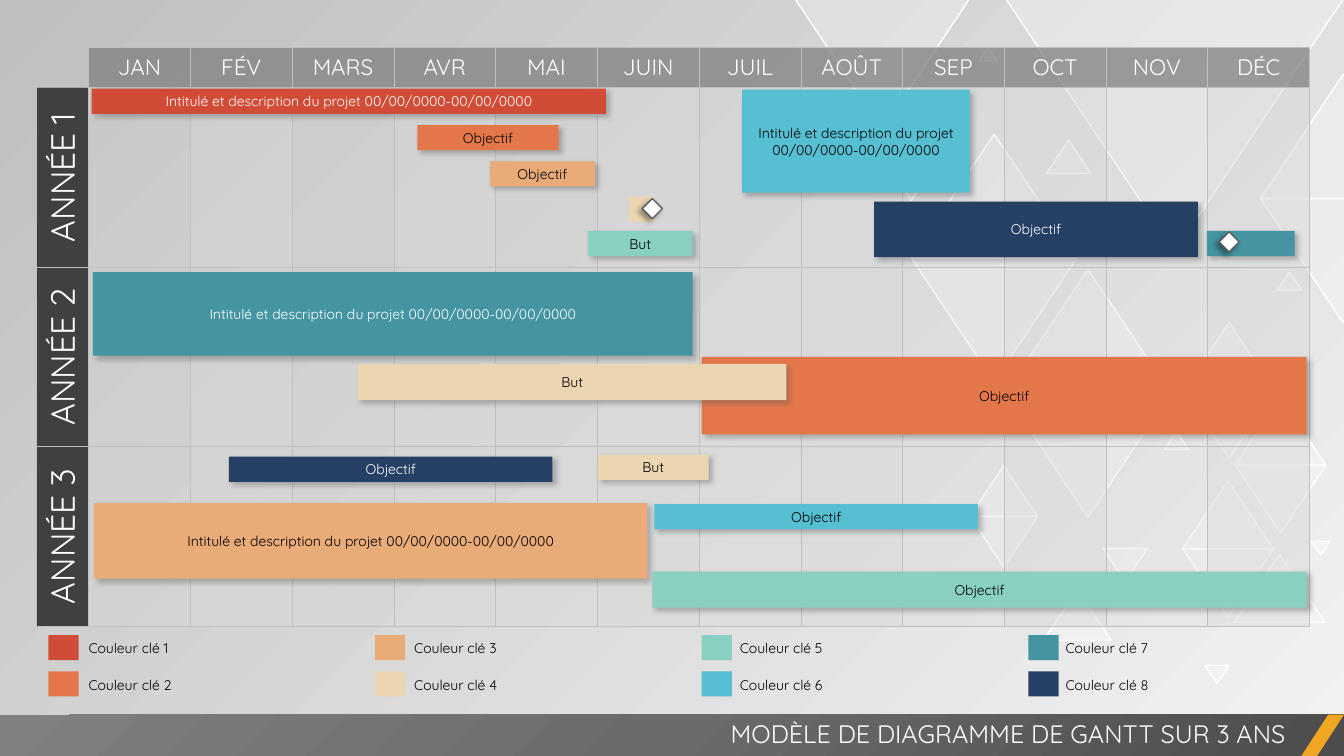
from lxml import etree
from pptx import Presentation
from pptx.dml.color import RGBColor as RGB
from pptx.enum.shapes import MSO_SHAPE as Preset
from pptx.enum.text import MSO_ANCHOR as Anchor, MSO_AUTO_SIZE as AutoSize, PP_ALIGN as Align
from pptx.oxml.ns import qn
from pptx.util import Inches, Pt

COLORS = {
    "white": "FFFFFF", "black": "000000", "dark": "404040", "outline": "595959",
    "header": "808080", "cell": "D9D9D9", "border": "BFBFBF", "header_border": "A6A6A6",
    "light": "F2F2F2", "footer": "4C4C4C", "footer_mid": "6B6B6B", "accent": "F0A622",
    "red": "D14C36", "orange": "E4774A", "peach": "E9AB77", "sand": "ECD6B2",
    "mint": "89D0C2", "sky": "56BFD2", "teal": "4494A2", "navy": "264065",
}
KEY_COLORS = ["red", "orange", "peach", "sand", "mint", "sky", "teal", "navy"]
MONTHS = ["JAN", "FÉV", "MARS", "AVR", "MAI", "JUIN",
          "JUIL", "AOÛT", "SEP", "OCT", "NOV", "DÉC"]
PROJECT = "Intitulé et description du projet 00/00/0000-00/00/0000"
GOAL = "Objectif"
TARGET = "But"
BARS = [
    (0.91, 0.88, 5.1, 0.25, "red", PROJECT),
    (4.14, 1.24, 1.4, 0.25, "orange", GOAL),
    (4.86, 1.6, 1.04, 0.25, "peach", GOAL),
    (5.83, 2.29, 1.04, 0.25, "mint", TARGET),
    (7.36, 0.89, 2.26, 1.02, "sky", PROJECT),
    (0.92, 2.7, 5.95, 0.83, "teal", PROJECT),
    (8.67, 2, 3.21, 0.55, "navy", GOAL),
    (6.96, 3.54, 6, 0.77, "orange", GOAL),
    (0.93, 4.99, 5.49, 0.75, "peach", PROJECT),
    (5.93, 4.51, 1.1, 0.25, "sand", TARGET),
    (6.47, 5.67, 6.49, 0.36, "mint", GOAL),
    (6.49, 5, 3.21, 0.25, "sky", GOAL),
    (11.97, 2.29, 0.87, 0.25, "teal", ""),
    (3.55, 3.61, 4.25, 0.36, "sand", TARGET),
    (2.27, 4.53, 3.21, 0.25, "navy", GOAL),
]
LIGHT_TEXT_BARS = {"red", "teal", "navy"}
MILESTONES = [(6.37, 1.97), (12.09, 2.3)]
RHOMBUSES = [(9.04, 1.33, 1.64), (9.97, 2.67, 1.64), (11.73, 4.77, 0.9), (11.74, 3.2, 0.9),
             (12.25, 3.94, 0.9), (9.62, 4.62, 0.67), (12.5, 0.74, 1.64)]
UPWARD = [(12.24, 5.5, 0.9), (10.35, 5.85, 0.67), (11.55, 4.28, 0.24),
          (12.67, 2.7, 0.24), (9.71, 0.47, 0.18), (10.38, 1.39, 0.44)]
DOWNWARD = [(9.97, -0.02, 3.36), (10.94, 5.44, 0.44), (11.95, 6.6, 0.24),
            (8.92, 1.81, 0.24), (13.01, 5.37, 0.18), (7.88, -0.02, 1.74)]


def rgb(name):
    return RGB.from_string(COLORS[name])


def child(parent, tag, **attributes):
    return etree.SubElement(parent, qn(tag), {key: str(value) for key, value in attributes.items()})


def set_alpha(element, percent):
    color = next(element.iter(qn("a:srgbClr")))
    child(color, "a:alpha", val=percent * 1000)


class GanttSlide:
    font = "Quicksand"

    def __init__(self, presentation):
        self.slide = presentation.slides.add_slide(presentation.slide_layouts[6])

    def background(self):
        fill = self.slide.background.fill
        fill.gradient()
        fill.gradient_angle = 135
        for stop, position, name in zip(fill.gradient_stops, (0, 1), ("light", "border")):
            stop.position = position
            stop.color.rgb = rgb(name)
        set_alpha(self.slide.background._cSld, 40)

    def text(self, frame, content, size, color, align=Align.CENTER):
        paragraph = frame.paragraphs[0]
        paragraph.alignment = align
        run = paragraph.add_run()
        run.text = content
        formats = {"name": self.font, "size": Pt(size), "bold": False}
        for attribute, value in formats.items():
            setattr(run.font, attribute, value)
        run.font.color.rgb = rgb(color)

    def shape(self, preset, box, fill, line=None, shapes=None):
        shapes = shapes or self.slide.shapes
        shape = shapes.add_shape(preset, *map(Inches, box))
        shape.fill.solid()
        shape.fill.fore_color.rgb = rgb(fill)
        if line:
            shape.line.color.rgb = rgb(line)
            shape.line.width = Pt(1)
        else:
            shape.line.fill.background()
        shape.shadow.inherit = False
        return shape

    def shadow(self, shape, color, angle):
        effects = shape._element.spPr.find(qn("a:effectLst"))
        outer = child(effects, "a:outerShdw", blurRad=Pt(4), dist=Pt(3),
                      dir=angle * 60000, algn="tl", rotWithShape=0)
        child(outer, "a:srgbClr", val=COLORS[color])
        set_alpha(outer, 40)

    def triangles(self):
        upward = UPWARD + RHOMBUSES
        downward = DOWNWARD + [(x, y + 0.75 * width, width) for x, y, width in RHOMBUSES]
        shapes = self.slide.shapes.add_group_shape().shapes
        for rotation, places in ((0, upward), (180, downward)):
            for x, y, width in places:
                triangle = self.shape(Preset.ISOSCELES_TRIANGLE, (x, y, width, 0.75 * width),
                                      "white", "white", shapes)
                triangle.rotation = rotation
                set_alpha(triangle._element.spPr.find(qn("a:solidFill")), 30)

    def label(self, box, content, size, color, align):
        frame = self.slide.shapes.add_textbox(*map(Inches, box)).text_frame
        formats = {"word_wrap": True, "auto_size": AutoSize.SHAPE_TO_FIT_TEXT}
        for attribute, value in formats.items():
            setattr(frame, attribute, value)
        self.text(frame, content, size, color, align)

    def footer(self, title):
        band = self.shape(Preset.RECTANGLE, (0, 7.09, 13.33, 0.42), "footer")
        properties = band._element.spPr
        gradient = etree.Element(qn("a:gradFill"), rotWithShape="1")
        stops = child(gradient, "a:gsLst")
        for position, name in ((0, "footer"), (50, "footer_mid"), (100, "header")):
            child(child(stops, "a:gs", pos=position * 1000), "a:srgbClr", val=COLORS[name])
        radial = child(gradient, "a:path", path="circle")
        child(radial, "a:fillToRect", l=100000, t=100000)
        properties.replace(properties.find(qn("a:solidFill")), gradient)
        accent = self.shape(Preset.PARALLELOGRAM, (12.9, 7.09, 0.43, 0.42), "accent")
        accent.adjustments[0] = 0.65
        self.label((5.25, 7.08, 7.6, 0.4), title, 18, "white", Align.RIGHT)

    def cell(self, cell, fill, alpha, borders, content="", size=16):
        cell.vertical_anchor = Anchor.MIDDLE
        properties = cell._tc.get_or_add_tcPr()
        if fill:
            cell.fill.solid()
            cell.fill.fore_color.rgb = rgb(fill)
            set_alpha(properties, alpha)
        else:
            cell.fill.background()
        for index, (side, color) in enumerate(zip("LRTB", borders)):
            line = etree.Element(qn(f"a:ln{side}"), w=str(Pt(0.5)))
            if color:
                child(child(line, "a:solidFill"), "a:srgbClr", val=COLORS[color])
            else:
                child(line, "a:noFill")
            properties.insert(index, line)
        if content:
            self.text(cell.text_frame, content, size, "white")

    def calendar(self):
        left, top, width, height = 0.36, 0.47, 12.63, 5.7
        year_width, month_height = 0.52, 0.36
        table = self.slide.shapes.add_table(4, 13, *map(Inches, (left, top, width, height))).table
        table.first_row = table.horz_banding = False
        for index, column in enumerate(table.columns):
            column.width = Inches((width - year_width) / 12 if index else year_width)
        for index, row in enumerate(table.rows):
            row.height = Inches((height - month_height) / 3 if index else month_height)
        grid = ["border"] * 4
        self.cell(table.cell(0, 0), None, 0, [None, "border", None, "header_border"])
        for column, month in enumerate(MONTHS, 1):
            self.cell(table.cell(0, column), "header", 75, grid, month)
        for row in range(1, 4):
            year = table.cell(row, 0)
            top_border = "header_border" if row == 1 else "border"
            self.cell(year, "dark", 100, ["border", "border", top_border, "border"],
                      f"ANNÉE {row}", 24)
            year._tc.tcPr.set("vert", "vert270")
            for column in range(1, 13):
                self.cell(table.cell(row, column), "cell", 25 if column % 2 else 50, grid)

    def bar(self, x, y, width, height, color, content):
        bar = self.shape(Preset.RECTANGLE, (x, y, width, height), color)
        self.shadow(bar, "outline", 45)
        if content:
            bar.text_frame.word_wrap = True
            bar.text_frame.vertical_anchor = Anchor.MIDDLE
            self.text(bar.text_frame, content, 10,
                      "white" if color in LIGHT_TEXT_BARS else "black")

    def milestone(self, x, y):
        diamond = self.shape(Preset.DIAMOND, (x, y, 0.2, 0.2), "white", "outline")
        self.shadow(diamond, "black", 135)

    def legend(self):
        for index, color in enumerate(KEY_COLORS):
            column, row = divmod(index, 2)
            y = 6.3 + 0.36 * row
            self.shape(Preset.RECTANGLE, (0.48 + 3.24 * column, y, 0.3, 0.25), color)
            self.label((0.78 + 3.23 * column, y, 2.4, 0.27),
                       f"Couleur clé {index + 1}", 10, "black", Align.LEFT)


def main():
    presentation = Presentation()
    presentation.slide_width = Inches(13.33)
    presentation.slide_height = Inches(7.5)
    gantt = GanttSlide(presentation)
    gantt.background()
    gantt.triangles()
    gantt.footer("MODÈLE DE DIAGRAMME DE GANTT SUR 3 ANS")
    gantt.calendar()
    gantt.shape(Preset.RECTANGLE, (6.24, 1.95, 0.24, 0.25), "sand")
    for bar in BARS:
        gantt.bar(*bar)
    for place in MILESTONES:
        gantt.milestone(*place)
    gantt.legend()
    presentation.save("out.pptx")


if __name__ == "__main__":
    main()
